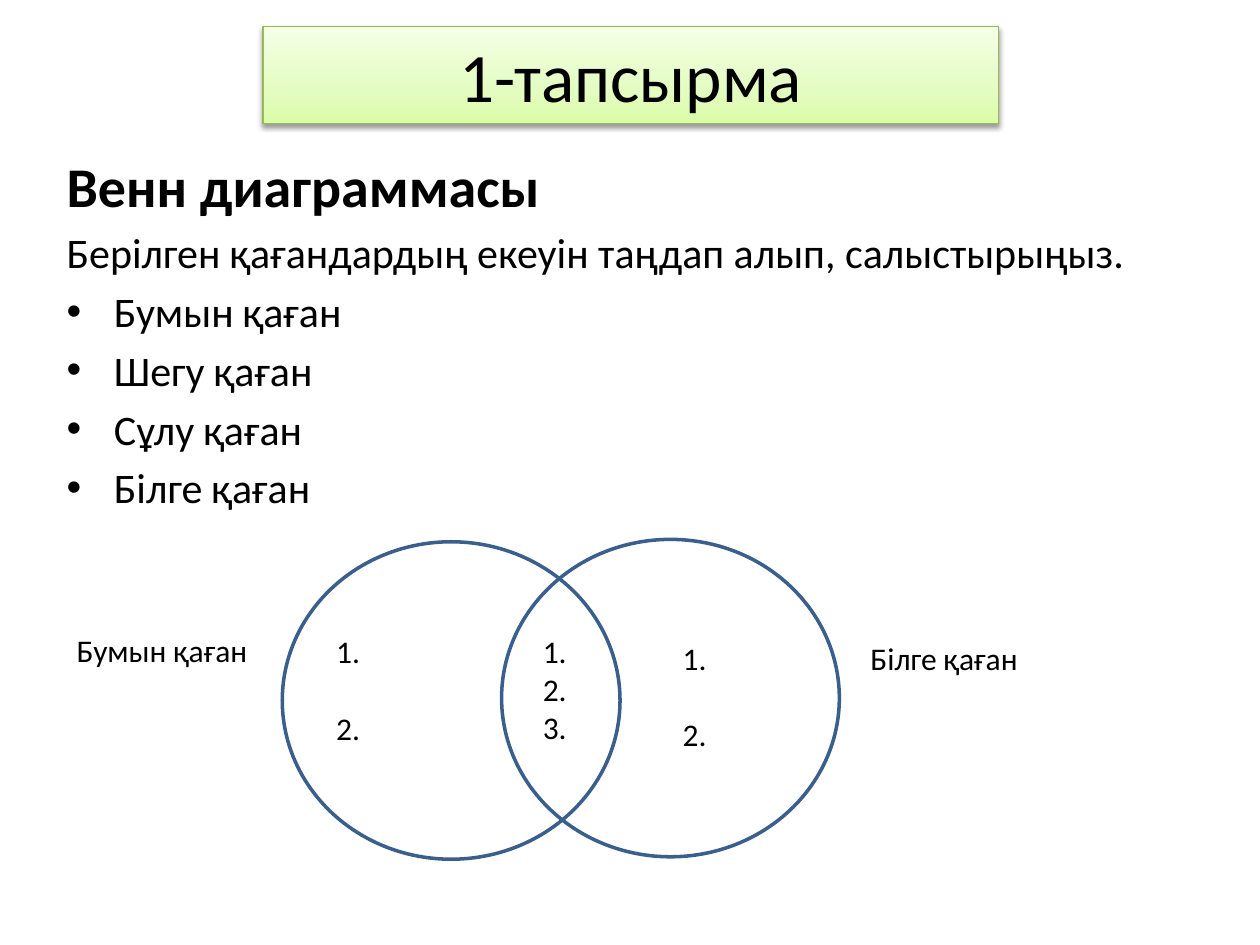
"""Build a Venn diagram task slide comparing two khagans."""
from copy import deepcopy
from lxml.etree import SubElement
from pptx import Presentation
from pptx.dml.color import RGBColor
from pptx.enum.shapes import MSO_SHAPE as Shape
from pptx.enum.text import MSO_ANCHOR as Anchor, MSO_AUTO_SIZE as AutoSize, PP_ALIGN as Align
from pptx.oxml.ns import qn
from pptx.util import Pt


def color(hex_code):
    return RGBColor.from_string(hex_code)


def write(paragraph, text, size, bold=False):
    run = paragraph.add_run()
    run.text = text
    run.font.name = "Calibri"
    run.font.size = Pt(size)
    run.font.bold = bold
    run.font.color.rgb = color("000000")


deck = Presentation()
deck.slide_width, deck.slide_height = Pt(720), Pt(540)
shapes = deck.slides.add_slide(deck.slide_layouts[6]).shapes

banner = shapes.add_shape(Shape.RECTANGLE, Pt(150.3), Pt(15), Pt(420.5), Pt(55.6))
banner.line.color.rgb = color("98B955")
banner.line.width = Pt(0.75)
banner.fill.gradient()
banner.fill.gradient_angle = 90
stop_list = next(banner.element.iter(qn("a:gsLst")))
stop_list.append(deepcopy(stop_list[-1]))
banner_stops = [(0, "DAFDA7"), (0.35, "E4FCC2"), (1, "F5FFE7")]
for stop, (position, tint) in zip(banner.fill.gradient_stops, banner_stops):
    stop.position = position
    stop.color.rgb = color(tint)
banner.shadow.inherit = False
effects = next(banner.element.iter(qn("a:effectLst")))
shadow = SubElement(effects, qn("a:outerShdw"), blurRad=str(Pt(3.1)), dist=str(Pt(1.6)),
                    dir="5400000", rotWithShape="0")
shadow_color = SubElement(shadow, qn("a:srgbClr"), val="000000")
SubElement(shadow_color, qn("a:alpha"), val="38000")
banner.text_frame.vertical_anchor = Anchor.MIDDLE
heading = banner.text_frame.paragraphs[0]
heading.alignment = Align.CENTER
write(heading, "1-тапсырма", 39.6)

task = shapes.add_textbox(Pt(31), Pt(82.8), Pt(648), Pt(404.6)).text_frame
task.word_wrap = True
task_lines = [
    ("Венн диаграммасы", 32, True, False),
    ("Берілген қағандардың екеуін таңдап алып, салыстырыңыз.", 24, False, False),
]
for khagan in ("Бумын", "Шегу", "Сұлу", "Білге"):
    task_lines.append((f"{khagan} қаған", 24, False, True))
for index, (text, size, bold, bulleted) in enumerate(task_lines):
    line = task.add_paragraph() if index else task.paragraphs[0]
    line.space_before = Pt(size * 0.2)
    write(line, text, size, bold)
    if bulleted:
        properties = line._p.get_or_add_pPr()
        properties.set("marL", str(Pt(27)))
        properties.set("indent", str(-Pt(27)))
        SubElement(properties, qn("a:buFont"), typeface="Arial")
        SubElement(properties, qn("a:buChar"), char="•")

for left, top in ((161.3, 309.6), (286.6, 308.2)):
    circle = shapes.add_shape(Shape.OVAL, Pt(left), Pt(top), Pt(193), Pt(181.4))
    circle.fill.background()
    circle.line.color.rgb = color("3A5F8C")
    circle.line.width = Pt(2)
    circle.shadow.inherit = False

venn_notes = [
    (36.7, 357.1, 113, 29, ["Бумын қаған"], 0),
    (490.3, 361.4, 100, 29, ["Білге қаған"], 0),
    (185, 357.8, 28, 72.7, ["1.", "2."], 22),
    (383, 361.4, 28, 72.7, ["1.", "2."], 22),
    (303.1, 357.8, 28, 72.7, ["1.", "2.", "3."], 0),
]
for left, top, width, height, entries, gap in venn_notes:
    note = shapes.add_textbox(Pt(left), Pt(top), Pt(width), Pt(height)).text_frame
    note.word_wrap = False
    note.auto_size = AutoSize.SHAPE_TO_FIT_TEXT
    for index, entry in enumerate(entries):
        line = note.add_paragraph() if index else note.paragraphs[0]
        line.space_before = Pt(gap if index else 0)
        write(line, entry, 18)

deck.save("out.pptx")
